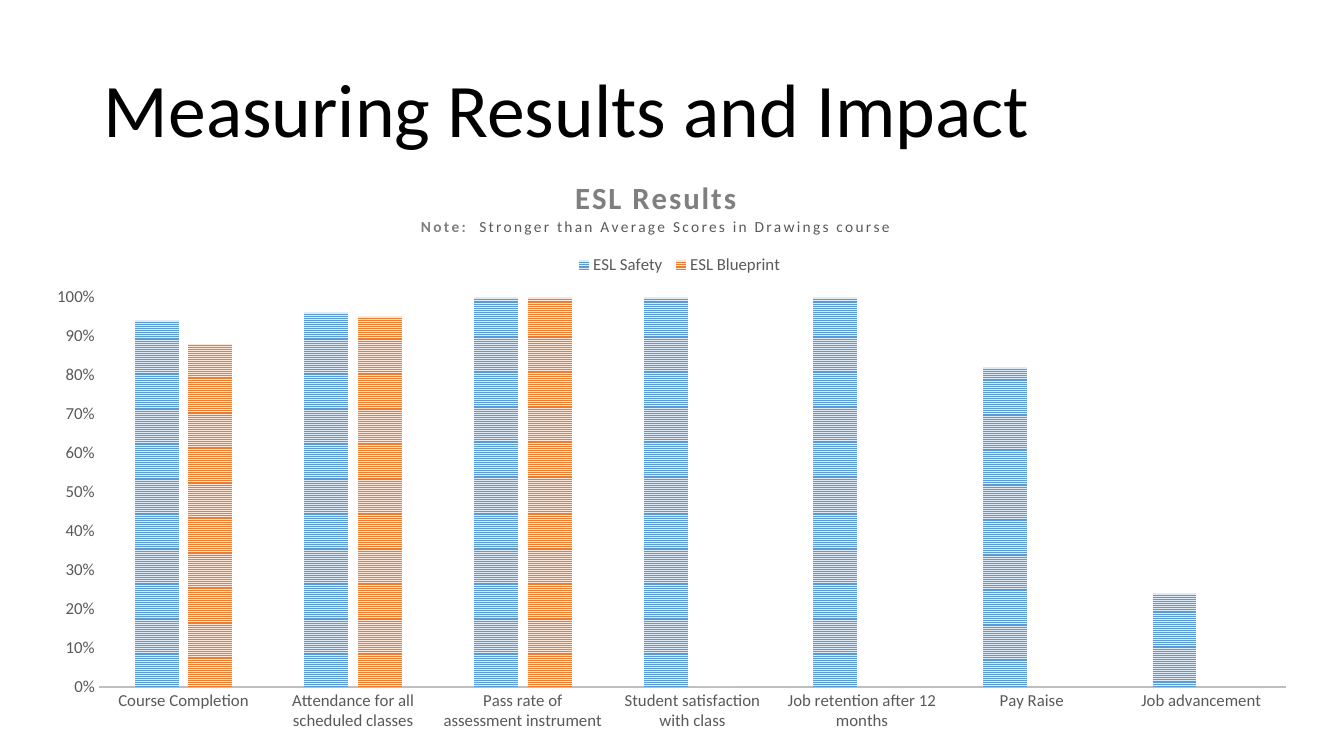
from lxml import etree
from pptx import Presentation
from pptx import util as u
from pptx.chart.data import CategoryChartData
from pptx.dml.color import RGBColor
from pptx.enum import chart as charts, dml, text
from pptx.oxml import parse_xml
from pptx.oxml.ns import nsdecls

WIDTH, HEIGHT = 13.33, 7.5
FONT = "Calibri"
COLORS = {
    "title": "000000", "label": "595959", "heading": "7F7F7F", "axis": "BFBFBF",
    "safety": "5B9BD5", "safety_pale": "DEEBF7",
    "blueprint": "ED7D31", "blueprint_pale": "FBE5D6",
}
CATEGORIES = [
    "Course Completion", "Attendance for all scheduled classes",
    "Pass rate of assessment instrument", "Student satisfaction with class",
    "Job retention after 12 months", "Pay Raise", "Job advancement",
]
RESULTS = {
    "ESL Safety": ("safety", [0.94, 0.96, 1, 1, 1, 0.82, 0.24]),
    "ESL Blueprint": ("blueprint", [0.88, 0.95, 1, 0, None, None, None]),
}


def color(name):
    return RGBColor.from_string(COLORS[name])


def box(left, top, width, height):
    """Turn shares of the slide into lengths."""
    return [u.Inches(share * side) for share, side in
            zip((left, top, width, height), (WIDTH, HEIGHT) * 2)]


def format_font(font, size, tone, bold=False):
    font.name, font.size, font.bold = FONT, u.Pt(size), bold
    font.color.rgb = color(tone)


def add_run(paragraph, words, size, tone, bold=False, spacing=0):
    run = paragraph.add_run()
    run.text = words
    format_font(run.font, size, tone, bold)
    if spacing:
        run.font._element.set("spc", str(int(spacing * 100)))


def place(element, after, inner=False, **shares):
    """Give a chart part a fixed place, in shares of the chart."""
    for old in element.findall("{*}layout"):
        element.remove(old)
    target = '<c:layoutTarget val="inner"/>' if inner else ""
    modes = "".join(f'<c:{side}Mode val="edge"/>' for side in "xy")
    sizes = "".join(f'<c:{side} val="{share}"/>' for side, share in shares.items())
    layout = parse_xml(f'<c:layout {nsdecls("c")}><c:manualLayout>{target}{modes}{sizes}'
                       '</c:manualLayout></c:layout>')
    if after is None:
        element.insert(0, layout)
    else:
        element.find("{*}" + after).addnext(layout)


def add_title(slide, words):
    shape = slide.shapes.add_textbox(*box(0.07, 0.053, 0.86, 0.193))
    frame = shape.text_frame
    frame.word_wrap = True
    frame.vertical_anchor = text.MSO_ANCHOR.MIDDLE
    paragraph = frame.paragraphs[0]
    paragraph.line_spacing = 0.9
    add_run(paragraph, words, 54, "title")


def add_chart_title(chart):
    frame = chart.chart_title.text_frame
    add_run(frame.paragraphs[0], "ESL Results", 22, "heading", bold=True, spacing=1.5)
    note = frame.add_paragraph()
    add_run(note, "Note:", 11, "heading", bold=True, spacing=1.5)
    add_run(note, "  Stronger than Average Scores in Drawings course", 11, "label",
            spacing=1.5)
    for paragraph in frame.paragraphs:
        paragraph.alignment = text.PP_ALIGN.CENTER
    chart.chart_title.include_in_layout = False
    place(chart.chart_title._element, "tx", x=0.3, y=0.03)


def format_axes(chart):
    for axis in (chart.category_axis, chart.value_axis):
        axis.has_major_gridlines = False
        axis.major_tick_mark = axis.minor_tick_mark = charts.XL_TICK_MARK.NONE
        format_font(axis.tick_labels.font, 12, "label")
    line = chart.category_axis.format.line
    line.width = u.Pt(1.5)
    line.color.rgb = color("axis")
    values = chart.value_axis
    values.format.line.fill.background()
    values.minimum_scale, values.maximum_scale, values.major_unit = 0, 1, 0.1
    values.tick_labels.number_format = "0%"
    values.tick_labels.number_format_is_linked = False


def add_results_chart(slide):
    data = CategoryChartData(number_format="0%")
    data.categories = CATEGORIES
    for name, (_, values) in RESULTS.items():
        data.add_series(name, values)
    chart = slide.shapes.add_chart(charts.XL_CHART_TYPE.COLUMN_CLUSTERED,
                                   *box(0.026, 0.208, 0.95, 0.77), data).chart
    format_font(chart.font, 10, "title")
    add_chart_title(chart)
    format_axes(chart)

    # Striped columns
    plot = chart.plots[0]
    plot.gap_width, plot.overlap, plot.vary_by_categories = 164, -22, False
    for series, (tone, _) in zip(plot.series, RESULTS.values()):
        fill = series.format.fill
        fill.patterned()
        fill.pattern = dml.MSO_PATTERN.NARROW_HORIZONTAL
        fill.fore_color.rgb = color(tone)
        fill.back_color.rgb = color(tone + "_pale")
        series.invert_if_negative = False

    # Legend and plot area
    chart.has_legend = True
    chart.legend.position = charts.XL_LEGEND_POSITION.TOP
    chart.legend.include_in_layout = False
    format_font(chart.legend.font, 12, "label")
    place(chart.legend._element, "legendPos", x=0.42, y=0.16, w=0.17, h=0.05)
    place(chart._chartSpace.chart.plotArea, None, inner=True,
          x=0.05, y=0.24, w=0.93, h=0.67)


def main():
    presentation = Presentation()
    presentation.slide_width, presentation.slide_height = u.Inches(WIDTH), u.Inches(HEIGHT)
    slide = presentation.slides.add_slide(presentation.slide_layouts[6])
    add_title(slide, "Measuring Results and Impact")
    add_results_chart(slide)
    presentation.save("out.pptx")


if __name__ == "__main__":
    main()
